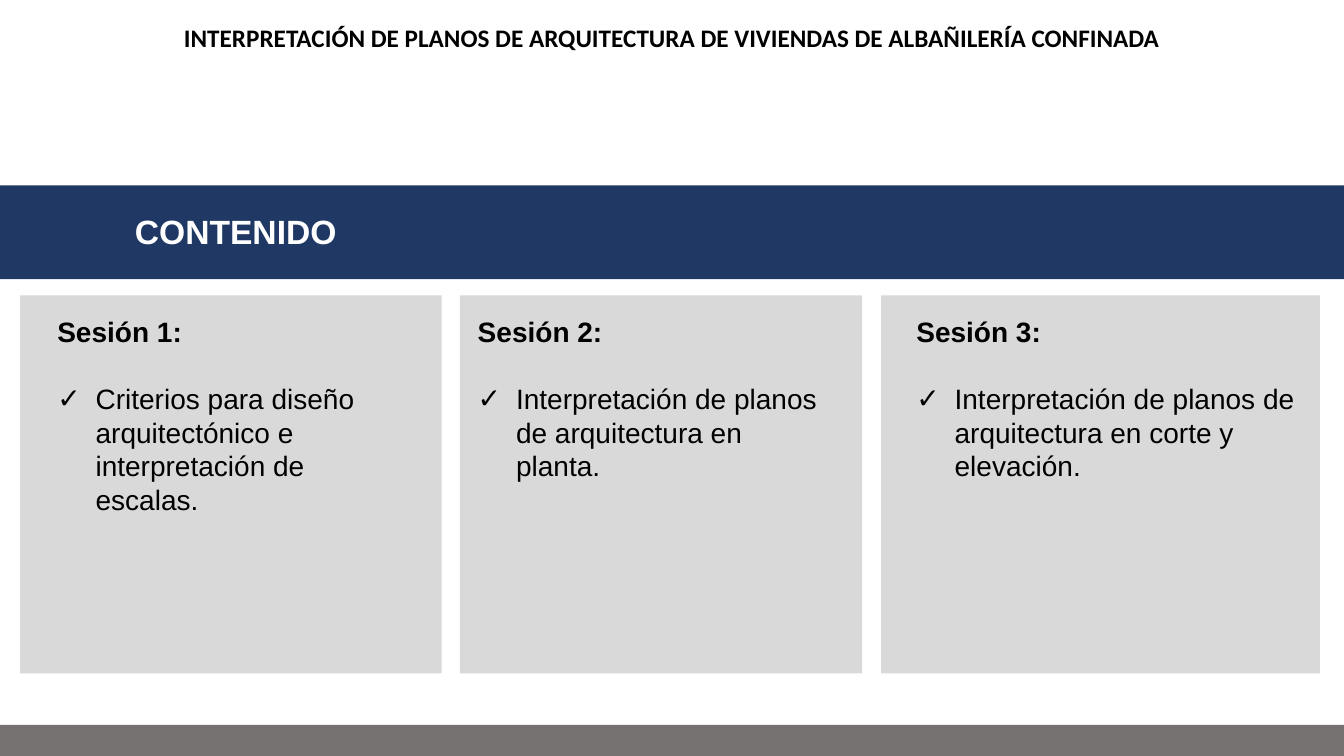
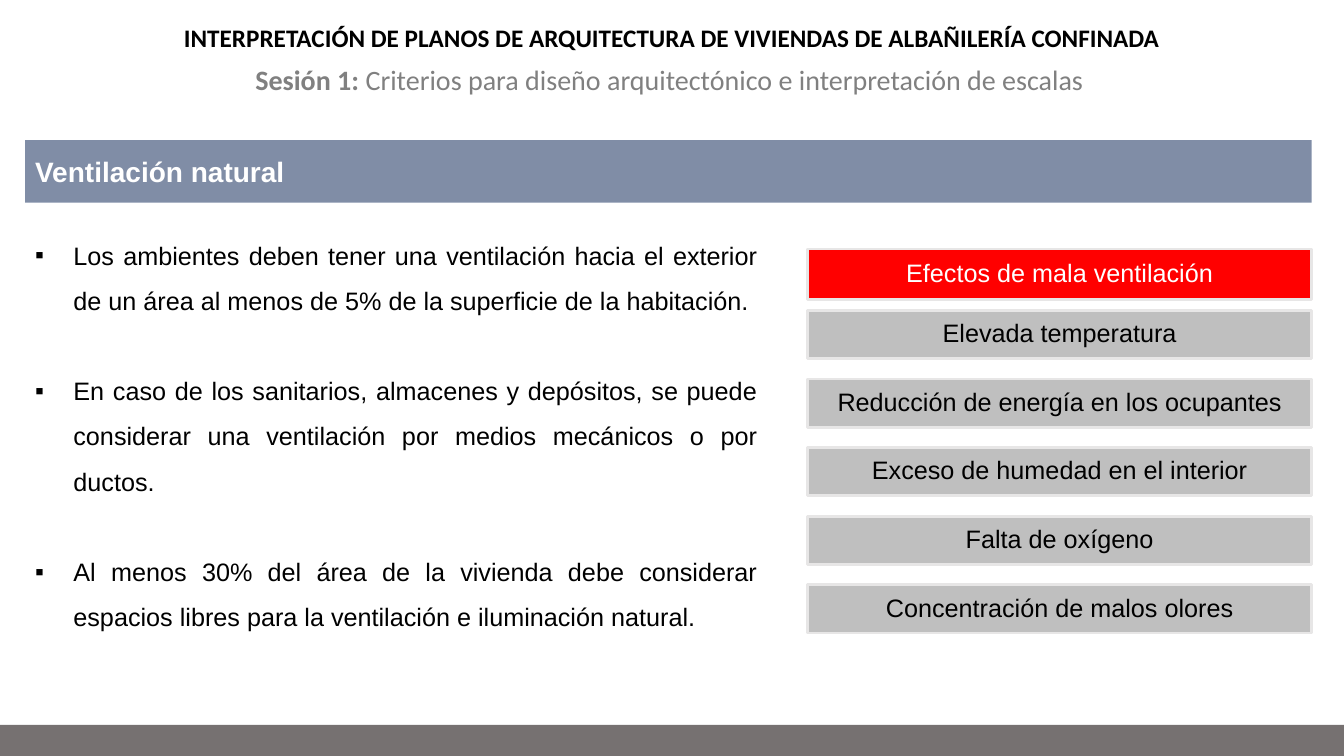
"""Build two slides of a course on reading house plans."""
from dataclasses import dataclass
from typing import Optional

from pptx import Presentation
from pptx import util as u
from pptx.dml.color import RGBColor
from pptx.enum import shapes, text
from pptx.oxml.ns import qn
from lxml import etree

PX = 9144
WIDTH, HEIGHT = 1333, 750
COLORS = {
    "navy": "203864", "footer": "767171", "panel": "D9D9D9", "effect": "BFBFBF",
    "alert": "FF0000", "edge": "E7E6E6", "muted": "808080",
    "black": "000000", "white": "FFFFFF",
}
COURSE = "INTERPRETACIÓN DE PLANOS DE ARQUITECTURA DE VIVIENDAS DE ALBAÑILERÍA CONFINADA"
CENTER, JUSTIFY = text.PP_ALIGN.CENTER, text.PP_ALIGN.JUSTIFY


@dataclass(frozen=True)
class Box:
    x: int
    y: int
    w: int
    h: int

    def emu(self) -> list[u.Emu]:
        """Return left, top, width and height in EMU."""
        return [u.Emu(v * PX) for v in (self.x, self.y, self.w, self.h)]


@dataclass(frozen=True)
class Run:
    text: str
    size: int
    color: str = "black"
    bold: bool = False
    font: str = "Arial"


@dataclass(frozen=True)
class Para:
    runs: tuple[Run, ...]
    align: text.PP_ALIGN = text.PP_ALIGN.LEFT
    bullet: str = ""
    spacing: Optional[float] = None
    before: int = 0


@dataclass(frozen=True)
class Session:
    panel: Box
    label: Box
    title: str
    topic: str


SESSIONS = (
    Session(Box(20, 293, 418, 375), Box(47, 307, 364, 212), "Sesión 1:",
            "Criterios para diseño arquitectónico e interpretación de escalas."),
    Session(Box(456, 293, 399, 375), Box(464, 307, 360, 178), "Sesión 2:",
            "Interpretación de planos de arquitectura en planta."),
    Session(Box(874, 293, 435, 375), Box(899, 307, 410, 178), "Sesión 3:",
            "Interpretación de planos de arquitectura en corte y elevación."),
)
RULES = (
    "Los ambientes deben tener una ventilación hacia el exterior de un área al menos "
    "de 5% de la superficie de la habitación.",
    "En caso de los sanitarios, almacenes y depósitos, se puede considerar una "
    "ventilación por medios mecánicos o por ductos.",
    "Al menos 30% del área de la vivienda debe considerar espacios libres para la "
    "ventilación e iluminación natural.",
)
EFFECTS = (
    "Elevada temperatura",
    "Reducción de energía en los ocupantes",
    "Exceso de humedad en el interior",
    "Falta de oxígeno",
    "Concentración de malos olores",
)


def rgb(name: str) -> RGBColor:
    """Look up a colour by name."""
    return RGBColor.from_string(COLORS[name])


def add_bullet(p, char: str) -> None:
    """Give a paragraph a hanging bullet."""
    pPr = p._p.get_or_add_pPr()
    pPr.set("marL", str(38 * PX))
    pPr.set("indent", str(-38 * PX))
    clr = etree.SubElement(pPr, qn("a:buClr"))
    etree.SubElement(clr, qn("a:srgbClr"), val=COLORS["black"])
    etree.SubElement(pPr, qn("a:buFont"), typeface="Arial")
    etree.SubElement(pPr, qn("a:buChar"), char=char)


def write(sp, paras: list[Para], inset: tuple[int, int] = (10, 5), middle: bool = False) -> None:
    """Fill a shape with paragraphs."""
    tf = sp.text_frame
    tf.word_wrap = True
    tf.margin_left = tf.margin_right = u.Emu(inset[0] * PX)
    tf.margin_top = tf.margin_bottom = u.Emu(inset[1] * PX)
    tf.vertical_anchor = text.MSO_ANCHOR.MIDDLE if middle else text.MSO_ANCHOR.TOP
    for i, para in enumerate(paras):
        p = tf.add_paragraph() if i else tf.paragraphs[0]
        if para.bullet:
            add_bullet(p, para.bullet)
        p.alignment = para.align
        if para.spacing:
            p.line_spacing = para.spacing
        if para.before:
            p.space_before = u.Pt(para.before)
        for run in para.runs:
            r = p.add_run()
            r.text = run.text
            r.font.name, r.font.size, r.font.bold = run.font, u.Pt(run.size), run.bold
            r.font.color.rgb = rgb(run.color)


def add_rect(s, box: Box, fill: str, edge: str = "", opacity: int = 100):
    """Draw a flat rectangle."""
    sp = s.shapes.add_shape(shapes.MSO_SHAPE.RECTANGLE, *box.emu())
    sp.shadow.inherit = False
    sp.fill.solid()
    sp.fill.fore_color.rgb = rgb(fill)
    if opacity < 100:
        clr = sp._element.spPr.find(qn("a:solidFill")).find(qn("a:srgbClr"))
        etree.SubElement(clr, qn("a:alpha"), val=str(opacity * 1000))
    if edge:
        sp.line.color.rgb = rgb(edge)
        sp.line.width = u.Pt(2)
    else:
        sp.line.fill.background()
    return sp


def add_text(s, box: Box, paras: list[Para]) -> None:
    """Add a text box."""
    write(s.shapes.add_textbox(*box.emu()), paras)


def add_slide(prs):
    """Add a slide with the shared footer band and course title."""
    s = prs.slides.add_slide(prs.slide_layouts[6])
    add_rect(s, Box(0, 719, WIDTH, 31), "footer")
    title = Run(COURSE, 18, bold=True, font="Calibri")
    add_text(s, Box(20, 17, 1293, 40), [Para((title,), CENTER)])
    return s


def add_effect(s, box: Box, label: str, fill: str, color: str) -> None:
    """Draw one bordered label of the effects list."""
    sp = add_rect(s, box, fill, "edge")
    write(sp, [Para((Run(label, 18, color),), CENTER, spacing=0.9)], (1, 1), True)


def build_contents(prs) -> None:
    """Build the slide that lists the sessions."""
    s = add_slide(prs)
    add_rect(s, Box(0, 184, WIDTH, 93), "navy")
    add_text(s, Box(124, 204, 1166, 50), [Para((Run("CONTENIDO", 24, "white", True),))])
    for session in SESSIONS:
        add_rect(s, session.panel, "panel")
        add_text(s, session.label, [
            Para((Run(session.title, 20, bold=True),)),
            Para((Run(session.topic, 20),), bullet="✓", before=24),
        ])


def build_ventilation(prs) -> None:
    """Build the slide on natural ventilation."""
    s = add_slide(prs)
    add_text(s, Box(15, 57, 1298, 64), [Para((
        Run("Sesión 1: ", 20, "muted", True, "Calibri"),
        Run("Criterios para diseño arquitectónico e interpretación de escalas",
            20, "muted", font="Calibri"),
    ), CENTER)])
    band = add_rect(s, Box(25, 139, 1276, 62), "navy", opacity=57)
    write(band, [Para((Run("Ventilación natural", 20, "white", True),))], middle=True)
    add_text(s, Box(25, 218, 736, 409), [
        Para((Run(rule, 18),), JUSTIFY, "▪", 1.5, 32 if i else 0)
        for i, rule in enumerate(RULES)
    ])
    add_effect(s, Box(801, 247, 500, 50), "Efectos de mala ventilación", "alert", "white")
    for i, effect in enumerate(EFFECTS):
        add_effect(s, Box(801, 308 + 68 * i, 500, 48), effect, "effect", "black")


def main() -> None:
    """Build and save the presentation."""
    prs = Presentation()
    prs.slide_width, prs.slide_height = u.Emu(WIDTH * PX), u.Emu(HEIGHT * PX)
    build_contents(prs)
    build_ventilation(prs)
    prs.save("out.pptx")


if __name__ == "__main__":
    main()
